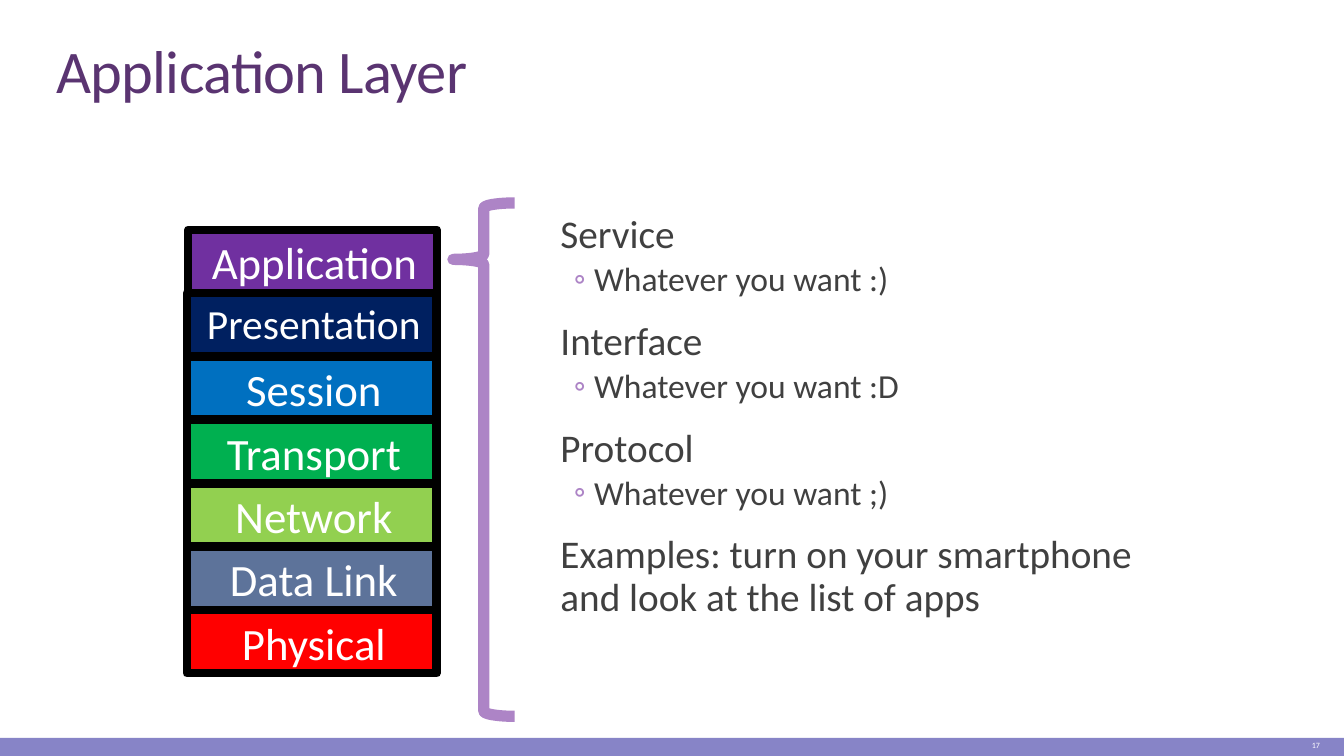
from lxml.etree import SubElement
from pptx import Presentation
from pptx.dml.color import RGBColor
from pptx.enum.shapes import MSO_SHAPE as Shape
from pptx.enum.text import MSO_ANCHOR as Anchor, MSO_AUTO_SIZE as Fit, PP_ALIGN as Align
from pptx.oxml.ns import qn
from pptx.util import Inches, Pt

COLORS = {
    "title": "5A3471", "body": "404040", "accent": "AD84C6",
    "footer": "8784C7", "white": "FFFFFF", "black": "000000",
    "Application": "7030A0", "Presentation": "002060", "Session": "0070C0",
    "Transport": "00B050", "Network": "92D050", "Data Link": "5D739A",
    "Physical": "FF0000",
}
LAYERS = ["Application", "Presentation", "Session", "Transport",
          "Network", "Data Link", "Physical"]
POINTS = [
    (0, "Service"), (1, "Whatever you want :)"),
    (0, "Interface"), (1, "Whatever you want :D"),
    (0, "Protocol"), (1, "Whatever you want ;)"),
    (0, "Examples: turn on your smartphone and look at the list of apps"),
]


def rgb(color):
    return RGBColor.from_string(COLORS[color])


class Deck:
    face = "Calibri"

    def __init__(self, wide):
        """Start a 16:9 file with one title-and-content slide."""
        self.file = Presentation()
        self.file.slide_width = Inches(wide)
        self.file.slide_height = Inches(wide * 9 / 16)
        self.slide = self.file.slides.add_slide(self.file.slide_layouts[1])

    def place(self, item, box):
        item.left, item.top, item.width, item.height = map(Inches, box)

    def font(self, para, size, color):
        para.font.name, para.font.size = self.face, Pt(size)
        para.font.color.rgb = rgb(color)

    def frame(self, item, anchor, pads=(0.1, 0.05)):
        """Set wrapping, anchor and (side, end) insets of a text frame."""
        frame = item.text_frame
        frame.word_wrap, frame.auto_size = True, Fit.NONE
        frame.vertical_anchor = anchor
        frame.margin_left = frame.margin_right = Inches(pads[0])
        frame.margin_top = frame.margin_bottom = Inches(pads[1])
        return frame

    def indent(self, para, left, hang=0):
        props = para._p.get_or_add_pPr()
        props.set("marL", str(Inches(left)))
        props.set("indent", str(Inches(hang)))
        return props

    def shape(self, kind, box, fill=None, line=None, width=0):
        item = self.slide.shapes.add_shape(kind, *map(Inches, box))
        item.shadow.inherit = False
        if fill:
            item.fill.solid()
            item.fill.fore_color.rgb = rgb(fill)
        else:
            item.fill.background()
        if line:
            item.line.color.rgb, item.line.width = rgb(line), Pt(width)
        else:
            item.line.fill.background()
        return item

    def text(self, text, box, size, align, anchor, pads=(0.1, 0.05)):
        item = self.slide.shapes.add_textbox(*map(Inches, box))
        para = self.frame(item, anchor, pads).paragraphs[0]
        para.text, para.alignment = text, align
        self.font(para, size, "white")
        return para

    def title(self, text, box):
        item = self.slide.shapes.title
        self.place(item, box)
        para = self.frame(item, Anchor.BOTTOM).paragraphs[0]
        para.alignment, para.line_spacing = Align.LEFT, 0.85
        run = para.add_run()
        run.text = text
        run._r.get_or_add_rPr().set("spc", "-40")
        self.font(para, 32.4, "title")

    def bullet(self, para, level):
        left, hang = ((0.07, -0.07), (0.32, -0.15))[level]
        props = self.indent(para, left, hang)
        tint = SubElement(props, qn("a:buClr"))
        SubElement(tint, qn("a:srgbClr"), val=COLORS["accent"])
        SubElement(props, qn("a:buFont"), typeface=self.face)
        SubElement(props, qn("a:buChar"), char=" ◦"[level])

    def body(self, points, box):
        item = self.slide.placeholders[1]
        self.place(item, box)
        frame = self.frame(item, Anchor.MIDDLE, (0, 0.05))
        for num, (level, text) in enumerate(points):
            para = frame.add_paragraph() if num else frame.paragraphs[0]
            para.text, para.level = text, level
            para.alignment, para.line_spacing = Align.LEFT, 0.9
            para.space_before = Pt((9, 1.5)[level])
            para.space_after = Pt((1.5, 3)[level])
            self.bullet(para, level)
            self.font(para, (21, 18)[level], "body")

    def layer(self, name, left, top, wide, high):
        self.shape(Shape.RECTANGLE, (left, top, wide, high), name, "black", 4.5)
        size = 22.2 if name == "Presentation" else 24
        box = (left - 0.02, top, wide - 0.02, high)
        para = self.text(name, box, size, Align.CENTER, Anchor.TOP, (0.07, 0.04))
        self.indent(para, 0.09)

    def brace(self, box):
        item = self.shape(Shape.LEFT_BRACE, box, line="accent", width=6)
        item.adjustments[0], item.adjustments[1] = 1 / 12, 0.11


def main():
    deck = Deck(10)
    deck.shape(Shape.RECTANGLE, (0, 5.49, 10, 0.14), "footer")
    deck.title("Application Layer", (0.32, 0.24, 9.48, 0.6))
    deck.body(POINTS, (4.1, 1.14, 4.5, 3.93))
    deck.text("17", (8.84, 5.46, 1.08, 0.17), 4.3, Align.RIGHT, Anchor.MIDDLE)
    first, last = 1.71, 4.54
    step = (last - first) / (len(LAYERS) - 1)
    for row, name in enumerate(LAYERS):
        nudge = 0 if row else 0.01
        deck.layer(name, 1.39 + nudge, first + row * step, 1.86 - nudge, 0.47)
    deck.brace((3.37, 1.51, 0.46, 3.82))
    deck.file.save("out.pptx")


if __name__ == "__main__":
    main()
